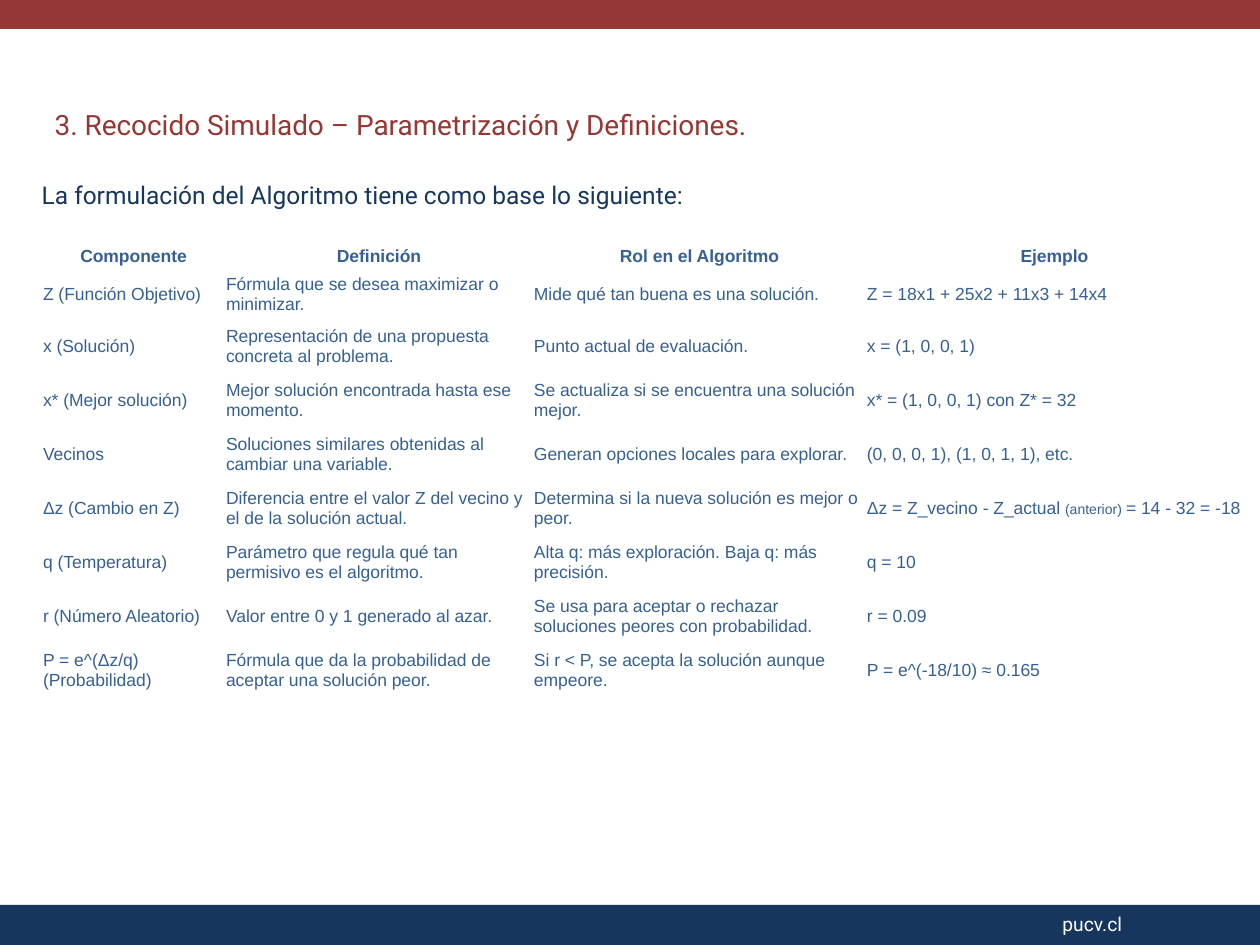
import pptx
import pptx.dml.color
import pptx.enum.shapes
import pptx.enum.text
import pptx.oxml.ns
import pptx.util
from lxml import etree

PX = 914400 / 126
RED = pptx.dml.color.RGBColor(0x95, 0x37, 0x34)
NAVY = pptx.dml.color.RGBColor(0x17, 0x36, 0x5D)
BLUE = pptx.dml.color.RGBColor(0x37, 0x60, 0x92)
WHITE = pptx.dml.color.RGBColor(0xFF, 0xFF, 0xFF)
ALIGN = pptx.enum.text.PP_ALIGN
COLUMN_WIDTHS = (183, 308, 333, 377)
ROW_HEIGHTS = (26, 50) + (54,) * 7
HEADINGS = ("Componente", "Definición", "Rol en el Algoritmo", "Ejemplo")
COMPONENTS = (
    ("Z (Función Objetivo)", "Fórmula que se desea maximizar o minimizar.",
     "Mide qué tan buena es una solución.", "Z = 18x1 + 25x2 + 11x3 + 14x4"),
    ("x (Solución)", "Representación de una propuesta concreta al problema.",
     "Punto actual de evaluación.", "x = (1, 0, 0, 1)"),
    ("x* (Mejor solución)", "Mejor solución encontrada hasta ese momento.",
     "Se actualiza si se encuentra una solución mejor.", "x* = (1, 0, 0, 1) con Z* = 32"),
    ("Vecinos", "Soluciones similares obtenidas al cambiar una variable.",
     "Generan opciones locales para explorar.", "(0, 0, 0, 1), (1, 0, 1, 1), etc."),
    ("Δz (Cambio en Z)", "Diferencia entre el valor Z del vecino y el de la solución actual.",
     "Determina si la nueva solución es mejor o peor.",
     (("Δz = Z_vecino - Z_actual ", 10), ("(anterior) ", 8), ("= 14 - 32 = -18", 10))),
    ("q (Temperatura)", "Parámetro que regula qué tan permisivo es el algoritmo.",
     "Alta q: más exploración. Baja q: más precisión.", "q = 10"),
    ("r (Número Aleatorio)", "Valor entre 0 y 1 generado al azar.",
     "Se usa para aceptar o rechazar soluciones peores con probabilidad.", "r = 0.09"),
    ("P = e^(Δz/q) (Probabilidad)", "Fórmula que da la probabilidad de aceptar una solución peor.",
     "Si r < P, se acepta la solución aunque empeore.", "P = e^(-18/10) ≈ 0.165"),
)


def px(length):
    """Turn pixels into EMU."""
    return pptx.util.Emu(round(length * PX))


def add_span(para, text, size, font, color, bold=False):
    """Add one formatted run to a paragraph."""
    span = para.add_run()
    span.text = text
    span.font.size = pptx.util.Pt(size)
    span.font.name = font
    span.font.bold = bold
    span.font.color.rgb = color


def add_bar(page, box, color):
    """Draw a plain band in the given box."""
    bar = page.shapes.add_shape(pptx.enum.shapes.MSO_SHAPE.RECTANGLE, *map(px, box))
    bar.shadow.inherit = False
    bar.fill.solid()
    bar.fill.fore_color.rgb = color
    bar.line.fill.background()


def add_footer(page, box):
    """Draw the bottom band with the web address."""
    left, top, width, height = box
    add_bar(page, box, NAVY)
    label = page.shapes.add_textbox(px(left + 1050), px(top + 1), px(304), px(91))
    label.text_frame.word_wrap = True
    add_span(label.text_frame.paragraphs[0], "pucv.cl", 11, "Roboto", WHITE)


def fill_heading(holder, box, text, size, color):
    """Place a placeholder in the box and give it one unbulleted line."""
    holder.left, holder.top, holder.width, holder.height = map(px, box)
    frame = holder.text_frame
    frame.word_wrap = True
    frame.auto_size = pptx.enum.text.MSO_AUTO_SIZE.SHAPE_TO_FIT_TEXT
    frame.vertical_anchor = pptx.enum.text.MSO_ANCHOR.TOP
    para = frame.paragraphs[0]
    para.alignment = ALIGN.LEFT
    para.space_before = pptx.util.Pt(0)
    properties = para._p.get_or_add_pPr()
    properties.set("marL", "0")
    properties.set("indent", "0")
    etree.SubElement(properties, pptx.oxml.ns.qn("a:buNone"))
    add_span(para, text, size, "Roboto", color)


def fill_cell(cell, content, header):
    """Write plain text or sized spans into a table cell."""
    cell.fill.background()
    cell.vertical_anchor = pptx.enum.text.MSO_ANCHOR.MIDDLE
    cell.margin_left = cell.margin_top = cell.margin_right = px(1)
    cell.margin_bottom = 0
    para = cell.text_frame.paragraphs[0]
    para.alignment = ALIGN.CENTER if header else ALIGN.LEFT
    spans = ((content, 10),) if isinstance(content, str) else content
    for text, size in spans:
        add_span(para, text, size, "Arial", BLUE, header)


def add_components(page, box):
    """Build the table of algorithm components."""
    rows = (HEADINGS,) + COMPONENTS
    table = page.shapes.add_table(len(rows), len(HEADINGS), *map(px, box)).table
    table.first_row = table.horz_banding = False
    for column, width in zip(table.columns, COLUMN_WIDTHS):
        column.width = px(width)
    for index, (height, contents) in enumerate(zip(ROW_HEIGHTS, rows)):
        table.rows[index].height = px(height)
        for cell, content in zip(table.rows[index].cells, contents):
            fill_cell(cell, content, index == 0)


def main():
    """Build and save the deck."""
    deck = pptx.Presentation()
    deck.slide_width, deck.slide_height = px(1260), px(945)
    page = deck.slides.add_slide(deck.slide_layouts[1])
    add_footer(page, (0, 905, 1260, 40))
    add_bar(page, (0, 0, 1260, 29), RED)
    fill_heading(page.shapes.title, (42, 101, 998, 47),
                 "3. Recocido Simulado – Parametrización y Definiciones.", 16, RED)
    fill_heading(page.placeholders[1], (29, 174, 959, 43),
                 "La formulación del Algoritmo tiene como base lo siguiente:", 14, NAVY)
    add_components(page, (42, 243, sum(COLUMN_WIDTHS), sum(ROW_HEIGHTS)))
    deck.save("out.pptx")


if __name__ == "__main__":
    main()
